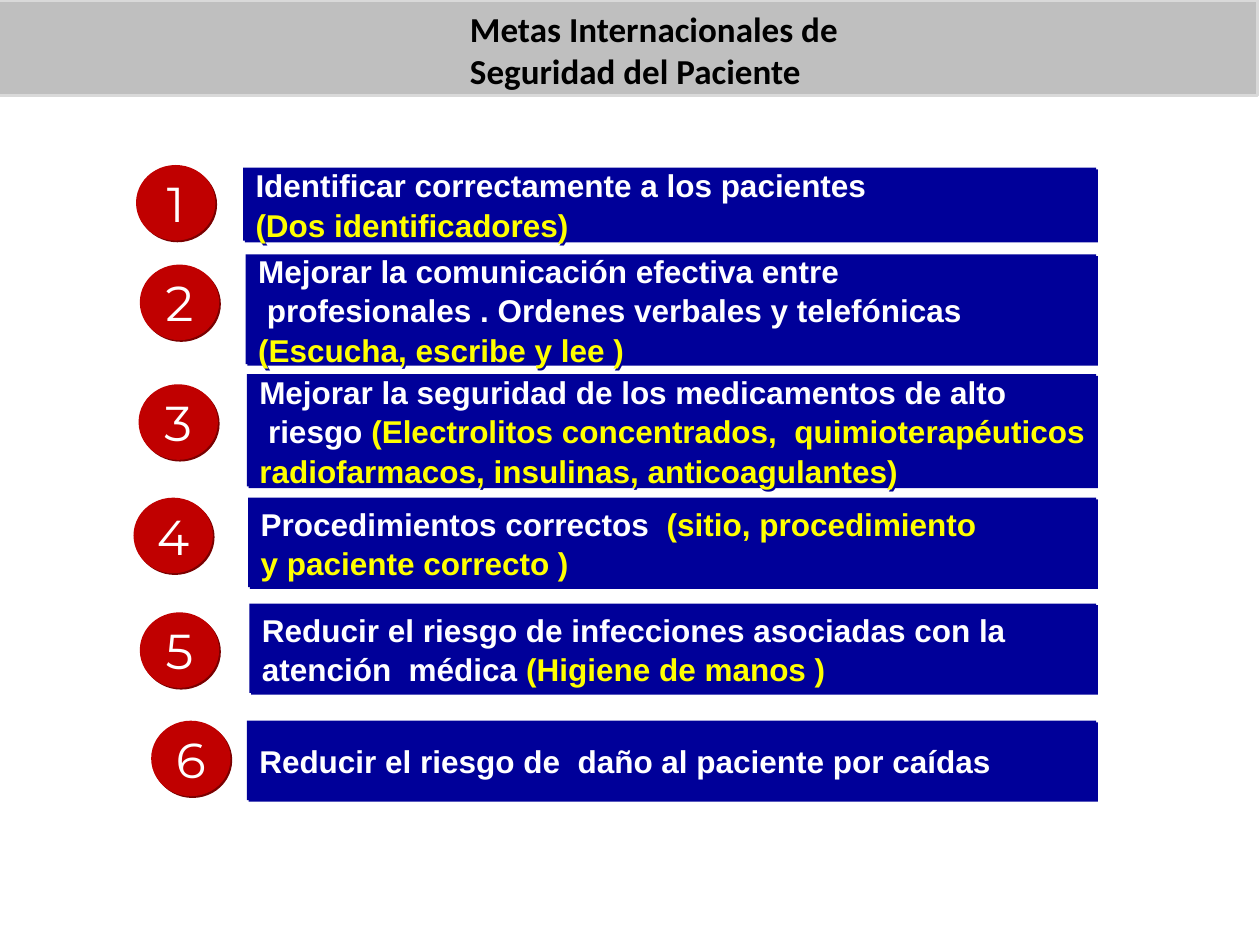
from lxml import etree
from pptx import Presentation
from pptx.dml.color import RGBColor
from pptx.enum.shapes import MSO_SHAPE
from pptx.enum.text import MSO_ANCHOR, PP_ALIGN
from pptx.oxml.ns import qn
from pptx.util import Inches, Pt

RECTANGLE, OVAL = MSO_SHAPE.RECTANGLE, MSO_SHAPE.OVAL
MIDDLE, TOP = MSO_ANCHOR.MIDDLE, MSO_ANCHOR.TOP
LEFT, CENTER = PP_ALIGN.LEFT, PP_ALIGN.CENTER

COLORS = {
    "band": "BFBFBF", "band_line": "D9D9D9", "bar": "000099", "circle": "C00000",
    "circle_shadow": "7A0000", "white": "FFFFFF", "yellow": "FFFF00", "black": "000000",
}
FONTS = {
    "title": {"name": "Calibri", "size": Pt(20), "bold": True},
    "goal": {"name": "Arial", "size": Pt(18), "bold": True},
    "number": {"name": "Montserrat", "size": Pt(28), "bold": False},
}
CIRCLE_WIDTH, CIRCLE_HEIGHT = 0.63, 0.6
BAR_RIGHT = 8.7

GOALS = [
    ((1.08, 1.31), (1.93, 1.33, 0.58), [
        [("Identificar correctamente a los pacientes", "white")],
        [("(Dos identificadores)", "yellow")]]),
    ((1.11, 2.1), (1.95, 2.02, 0.87), [
        [("Mejorar la comunicación efectiva entre", "white")],
        [(" profesionales . Ordenes verbales y telefónicas", "white")],
        [("(Escucha, escribe y lee )", "yellow")]]),
    ((1.1, 3.05), (1.96, 2.97, 0.89), [
        [("Mejorar la seguridad de los medicamentos de alto", "white")],
        [(" riesgo ", "white"), ("(Electrolitos concentrados,  quimioterapéuticos", "yellow")],
        [("radiofarmacos, insulinas, anticoagulantes)", "yellow")]]),
    ((1.06, 3.95), (1.97, 3.95, 0.71), [
        [("Procedimientos correctos  ", "white"), ("(sitio, procedimiento", "yellow")],
        [("y paciente correcto )", "yellow")]]),
    ((1.11, 4.86), (1.98, 4.79, 0.71), [
        [("Reducir el riesgo de infecciones asociadas con la", "white")],
        [("atención  médica ", "white"), ("(Higiene de manos )", "yellow")]]),
    ((1.2, 5.72), (1.96, 5.72, 0.63), [
        [("Reducir el riesgo de  daño al paciente por caídas", "white")]]),
]


def add_shadowed_shape(kind, left, top, width, height, fill, shadow):
    shape = slide.shapes.add_shape(
        kind, Inches(left), Inches(top), Inches(width), Inches(height))
    shape.fill.solid()
    shape.fill.fore_color.rgb = RGBColor.from_string(COLORS[fill])
    shape.line.fill.background()
    shape.shadow.inherit = False
    effects = shape.element.spPr.find(qn("a:effectLst"))
    outer = etree.SubElement(effects, qn("a:outerShdw"), dist=str(Pt(1.4)),
                             dir="2700000", algn="ctr", rotWithShape="0")
    etree.SubElement(outer, qn("a:srgbClr"), val=COLORS[shadow])
    return shape


def write_lines(shape, lines, font, alignment, anchor, wrap, spacing):
    frame = shape.text_frame
    frame.word_wrap = wrap
    frame.vertical_anchor = anchor
    for index, line in enumerate(lines):
        paragraph = frame.add_paragraph() if index else frame.paragraphs[0]
        paragraph.alignment = alignment
        paragraph.line_spacing = spacing
        for text, color in line:
            run = paragraph.add_run()
            run.text = text
            for name, value in FONTS[font].items():
                setattr(run.font, name, value)
            run.font.color.rgb = RGBColor.from_string(COLORS[color])


presentation = Presentation()
presentation.slide_width = Inches(10)
presentation.slide_height = Inches(7.5)
slide = presentation.slides.add_slide(presentation.slide_layouts[5])

band = slide.shapes.add_shape(RECTANGLE, Inches(-0.02), 0, Inches(10), Inches(0.76))
band.fill.solid()
band.fill.fore_color.rgb = RGBColor.from_string(COLORS["band"])
band.line.color.rgb = RGBColor.from_string(COLORS["band_line"])
band.line.width = Pt(2)
band.shadow.inherit = False
band.element.getparent().insert(2, band.element)

title = slide.shapes.title
title.left, title.top = Inches(3.63), Inches(0.01)
title.width, title.height = Inches(3.62), Inches(0.77)
write_lines(title, [[("Metas Internacionales de Seguridad del Paciente", "black")]],
            "title", LEFT, TOP, True, 1.0)

for number, (circle_place, (left, top, height), lines) in enumerate(GOALS, start=1):
    bar = add_shadowed_shape(RECTANGLE, left, top, BAR_RIGHT - left, height, "bar", "bar")
    write_lines(bar, lines, "goal", LEFT, MIDDLE, False, 1.05)
    circle = add_shadowed_shape(OVAL, *circle_place, CIRCLE_WIDTH, CIRCLE_HEIGHT,
                                "circle", "circle_shadow")
    write_lines(circle, [[(str(number), "white")]], "number", CENTER, MIDDLE, False, 1.0)

presentation.save("out.pptx")
